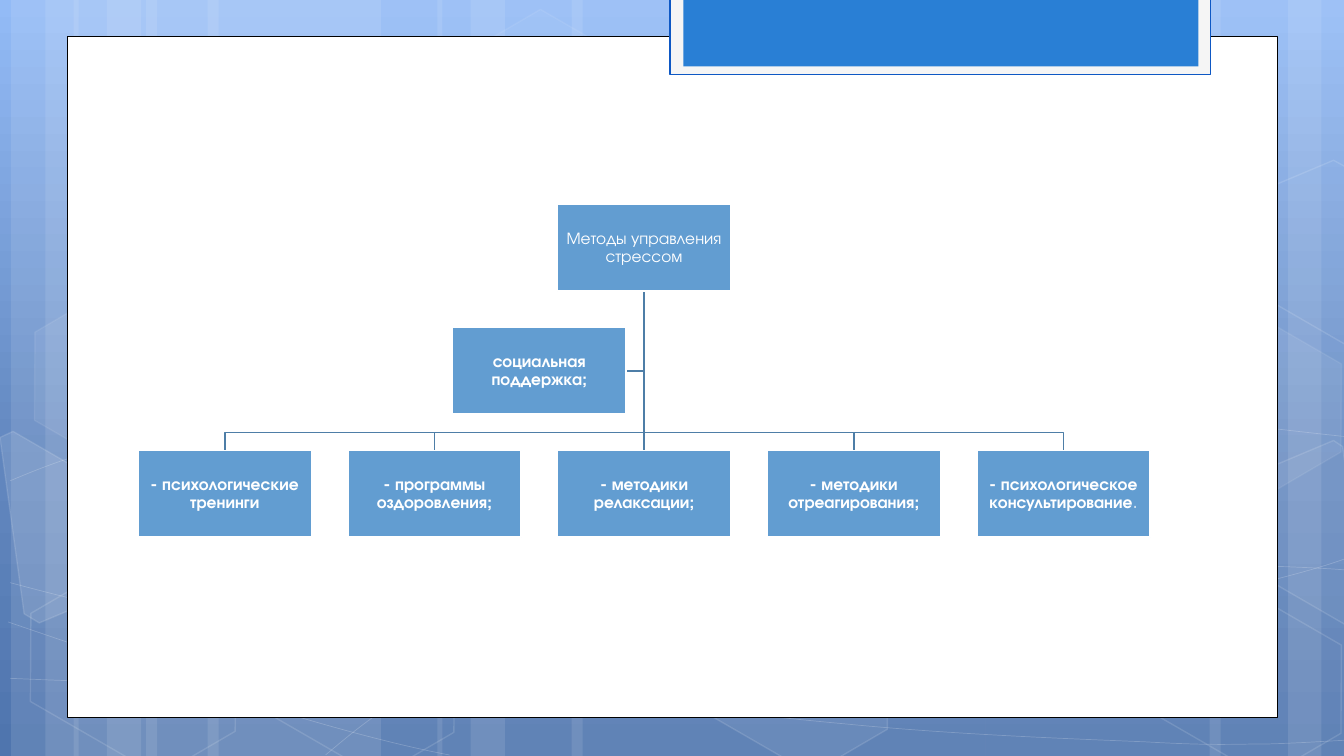
import copy

import pptx
import pptx.dml.color
import pptx.enum.shapes
import pptx.enum.text
import pptx.oxml
import pptx.oxml.ns
import pptx.util

Inches = pptx.util.Inches
Pt = pptx.util.Pt
RGBColor = pptx.dml.color.RGBColor
SHAPE = pptx.enum.shapes.MSO_SHAPE
qn = pptx.oxml.ns.qn

WHITE = RGBColor(0xFF, 0xFF, 0xFF)
BLACK = RGBColor(0x00, 0x00, 0x00)
TAB_GREY = RGBColor(0xF5, 0xF5, 0xF5)
TAB_EDGE = RGBColor(0x0E, 0x58, 0xC4)
TAB_BLUE = RGBColor(0x29, 0x7F, 0xD5)
NODE_BLUE = RGBColor(0x62, 0x9D, 0xD1)
LINK_BLUE = RGBColor(0x4E, 0x7E, 0xA7)
SKY = [(0, RGBColor(0x93, 0xBB, 0xF6)), (0.62, RGBColor(0x61, 0x86, 0xBE)),
       (1, RGBColor(0x4F, 0x75, 0xAE))]
FONT = "TeX Gyre Adventor"
PAGE_BOX = (0, 0, 40 / 3, 7.5)

# Left and width of each translucent stripe
STRIPES = [(1.45, 2.33), (0.11, 0.67), (0.45, 1.11), (2.06, 2.33), (0.73, 0.67),
           (1.06, 1.11), (9.78, 2.33), (12.78, 0.67), (12, 1.11), (5.67, 4.11),
           (4.34, 0.67), (4.67, 1.11)]

# Waves: a start point, then two handles and an end point for each curve
WAVES = [
    [(0.1, 6.73), (0.82, 6.76), (1.54, 6.79), (2.54, 6.78), (3.54, 6.77), (4.77, 6.75),
     (6.1, 6.65), (7.44, 6.55), (9.33, 6.36), (10.55, 6.17), (11.78, 5.98),
     (13.03, 5.68), (13.43, 5.51)],
    [(0.1, 4.77), (0.48, 4.61), (0.86, 4.46), (1.62, 4.31), (2.38, 4.16), (3.45, 3.94),
     (4.63, 3.87), (5.82, 3.8), (7.25, 3.79), (8.72, 3.87), (10.19, 3.95),
     (12.63, 4.26), (13.43, 4.34)],
    [(0.08, 6.17), (1.69, 6.72), (3.3, 7.27), (4.46, 7.49)],
    [(0.1, 5.78), (0.51, 5.89), (0.93, 6), (1.71, 6.16), (2.48, 6.31), (3.64, 6.56),
     (4.75, 6.73), (5.86, 6.9), (7.27, 7.08), (8.37, 7.18), (9.48, 7.29), (10.66, 7.33),
     (11.37, 7.36), (12.07, 7.4), (12.25, 7.38), (12.6, 7.38), (12.94, 7.37),
     (13.19, 7.35), (13.43, 7.34)],
    [(3.23, 7.49), (3.47, 7.29), (3.7, 7.09), (4.03, 6.91), (4.35, 6.73), (4.8, 6.53),
     (5.17, 6.39), (5.54, 6.25), (5.77, 6.19), (6.26, 6.09), (6.75, 5.99), (7.65, 5.85),
     (8.11, 5.78), (8.58, 5.71), (8.65, 5.71), (9.07, 5.69), (9.48, 5.66), (10.13, 5.63),
     (10.59, 5.62), (11.05, 5.61), (11.82, 5.62), (11.82, 5.62), (12.1, 5.62),
     (12.4, 5.62), (12.7, 5.62), (12.95, 5.63), (13.17, 5.64), (13.29, 5.65),
     (13.41, 5.66), (13.37, 5.65), (13.41, 5.66)],
]

# Left, top, fill opacity and line opacity of each hexagon, in percent
HEXAGONS = [(4.45, 0.36, 4, 8), (6.62, 5.89, 6, 12), (0.15, 5.91, 0, 12), (0.19, 3.12, 7, 8),
            (2.32, 5.92, 0, 12), (11.12, 5.93, 0, 12), (11.12, 3.14, 7, 8)]

# Hexagons cut by the page edge: fill opacity and corners
CUT_HEXAGONS = [
    (10, [(0, 4.34), (0.13, 4.28), (1.15, 4.87), (1.27, 5.81), (0.39, 6.18), (0.24, 6.09)]),
    (4, [(12.35, 4.74), (13.23, 4.37), (13.32, 4.43), (13.57, 6.25), (13.49, 6.28),
         (12.47, 5.69)]),
    (0, [(12.35, 1.96), (13.23, 1.59), (13.34, 1.65), (13.57, 3.46), (13.49, 3.5),
         (12.47, 2.91)]),
]

METHODS = ["- психологические тренинги", "- программы оздоровления;", "- методики релаксации;",
           "- методики отреагирования;", "- психологическое консультирование"]


def add_element(parent, name, attributes=""):
    space = "http://schemas.openxmlformats.org/drawingml/2006/main"
    parent.append(pptx.oxml.parse_xml(f'<a:{name} xmlns:a="{space}" {attributes}/>'))
    return parent[-1]


def paint(shape, fill=None, line=None, width=1.0, fill_opacity=100, line_opacity=100):
    shape.shadow.inherit = False
    for target, color, opacity in ((shape.fill, fill, fill_opacity),
                                   (shape.line.fill, line, line_opacity)):
        if color is None or opacity == 0:
            target.background()
            continue
        target.solid()
        target.fore_color.rgb = color
        if opacity < 100:
            properties = shape.element.spPr
            parent = properties if target is shape.fill else properties.find(qn("a:ln"))
            add_element(parent.find(qn("a:solidFill"))[0], "alpha", f'val="{opacity * 1000}"')
    if line is not None:
        shape.line.width = Pt(width)


def add_box(page, box, kind=SHAPE.RECTANGLE, **style):
    shape = page.shapes.add_shape(kind, *map(Inches, box))
    paint(shape, **style)
    return shape


def add_outline(page, points, close=False, **style):
    corners = [(Inches(x), Inches(y)) for x, y in points]
    builder = page.shapes.build_freeform(*corners[0])
    builder.add_line_segments(corners[1:], close=close)
    shape = builder.convert_to_shape()
    paint(shape, **style)
    return shape


def bend(shape):
    # Each three line ends become the handles and the end of one curve
    outline = next(shape.element.iter(qn("a:path")))
    lines = outline.findall(qn("a:lnTo"))
    for start in range(0, len(lines), 3):
        curve = add_element(outline, "cubicBezTo")
        for line in lines[start:start + 3]:
            curve.append(line[0])
            outline.remove(line)


def add_backdrop(page, box):
    left, top, width, height = box
    # Sky gradient
    fill = page.background.fill
    fill.gradient()
    fill.gradient_angle = 270
    stops = next(page.element.iter(qn("a:gsLst")))
    stops.insert(1, copy.deepcopy(stops[0]))
    for stop, (position, color) in zip(fill.gradient_stops, SKY):
        stop.position = position
        stop.color.rgb = color
    # Stripes, waves and hexagons
    for offset, stripe_width in STRIPES:
        add_box(page, (left + offset, top, stripe_width, height), fill=WHITE, fill_opacity=10)
    for nodes in WAVES:
        points = [(left + x, top + y) for x, y in nodes]
        bend(add_outline(page, points, line=WHITE, width=0.5, line_opacity=20))
    for x, y, fill_opacity, line_opacity in HEXAGONS:
        hexagon = add_box(page, (left + x, top + y, 2.34, 1.52), SHAPE.HEXAGON, fill=WHITE,
                          line=WHITE, fill_opacity=fill_opacity, line_opacity=line_opacity)
        hexagon.adjustments[0] = 0.285
        hexagon.rotation = 30
    for fill_opacity, corners in CUT_HEXAGONS:
        points = [(left + x, top + y) for x, y in corners]
        add_outline(page, points, True, fill=WHITE, line=WHITE,
                    fill_opacity=fill_opacity, line_opacity=12)


def add_panel(page, box):
    left, top, width, height = box
    add_box(page, box, fill=WHITE, line=BLACK, width=0.5)
    # Tab hanging from the top edge
    add_box(page, (left + 5.98, top - 0.38, 5.36, 0.76), fill=TAB_GREY, line=TAB_EDGE, width=1.25)
    add_box(page, (left + 6.11, top - 0.38, 5.11, 0.68), fill=TAB_BLUE)


def add_node(page, box, text, ending="", bold=True):
    node = add_box(page, box, fill=NODE_BLUE, line=WHITE, width=1.25)
    frame = node.text_frame
    frame.word_wrap = True
    frame.vertical_anchor = pptx.enum.text.MSO_ANCHOR.MIDDLE
    frame.margin_left = frame.margin_right = frame.margin_top = frame.margin_bottom = Inches(0.01)
    frame.text = text
    para = frame.paragraphs[0]
    para.alignment = pptx.enum.text.PP_ALIGN.CENTER
    para.line_spacing = 0.9
    if ending:
        para.add_run().text = ending
    for index, span in enumerate(para.runs):
        span.font.name, span.font.size = FONT, Pt(12)
        span.font.bold = bold and index == 0
        span.font.color.rgb = WHITE


def add_hierarchy(page, box):
    left, top, width, height = box
    node_width, node_height, gap = 1.72, 0.86, 0.36
    center, root_bottom = left + width / 2, top + node_height
    row_top = top + height - node_height
    bar = row_top - gap / 2
    side_top, side_right = (top + row_top) / 2, center - gap / 2
    side_middle = side_top + node_height / 2
    lefts = [left + (node_width + gap) * index for index in range(len(METHODS))]
    # Links
    add_outline(page, [(center, root_bottom), (center, side_middle), (side_right, side_middle)],
                line=LINK_BLUE, width=1.25)
    for index in reversed(range(len(METHODS))):
        middle = lefts[index] + node_width / 2
        if index == len(METHODS) // 2:
            ends = map(Inches, (center, root_bottom, center, row_top))
            trunk = page.shapes.add_connector(pptx.enum.shapes.MSO_CONNECTOR.STRAIGHT, *ends)
            trunk.line.color.rgb = LINK_BLUE
            trunk.line.width = Pt(1.25)
            add_element(trunk.element.spPr, "effectLst")
        else:
            add_outline(page, [(center, root_bottom), (center, bar), (middle, bar),
                               (middle, row_top)], line=LINK_BLUE, width=1.25)
    # Nodes
    size = (node_width, node_height)
    add_node(page, (center - node_width / 2, top, *size), "Методы управления стрессом", bold=False)
    for x, method in zip(lefts, METHODS):
        add_node(page, (x, row_top, *size), method, "." if method == METHODS[-1] else "")
    add_node(page, (side_right - node_width, side_top, *size), "социальная поддержка;")


deck = pptx.Presentation()
deck.slide_width, deck.slide_height = map(Inches, PAGE_BOX[2:])
slide = deck.slides.add_slide(deck.slide_layouts[6])
add_backdrop(slide, PAGE_BOX)
add_panel(slide, (0.67, 0.36, 12, 6.76))
add_hierarchy(slide, (1.37, 2.03, 10.04, 3.3))
deck.save("out.pptx")
